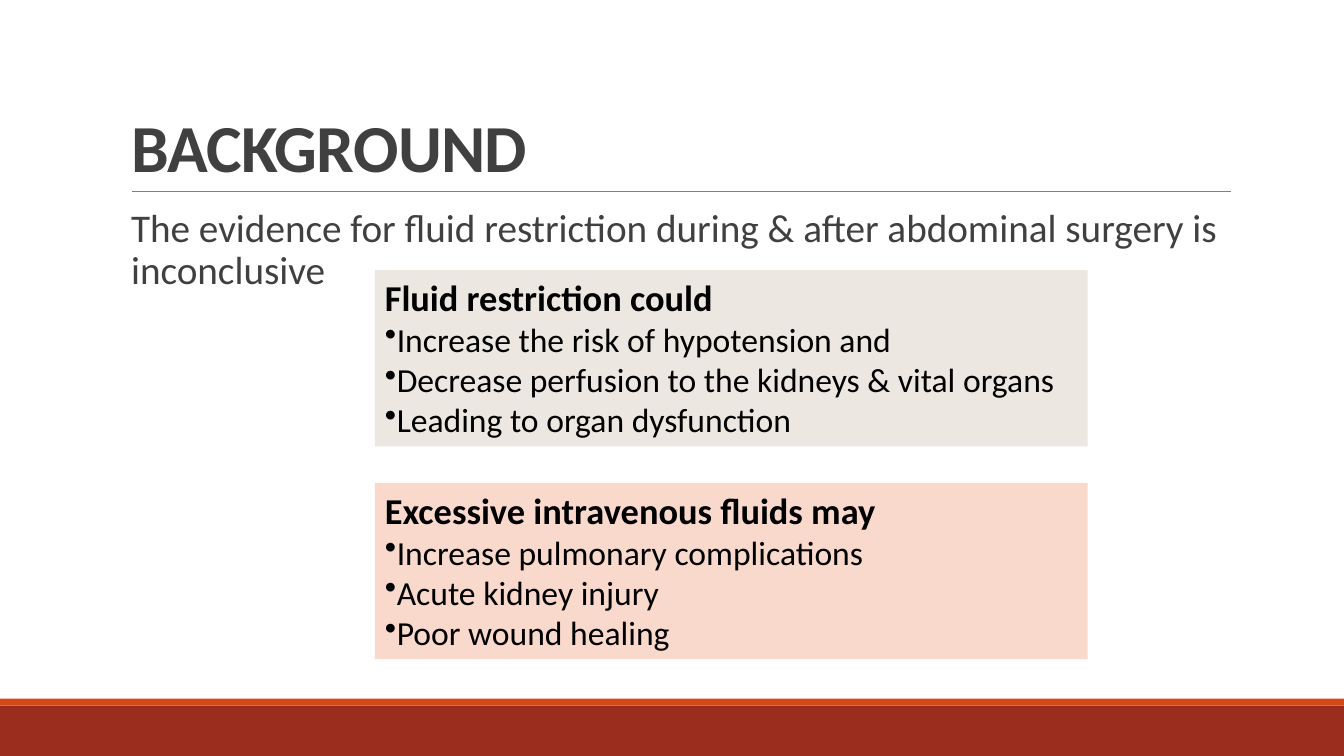
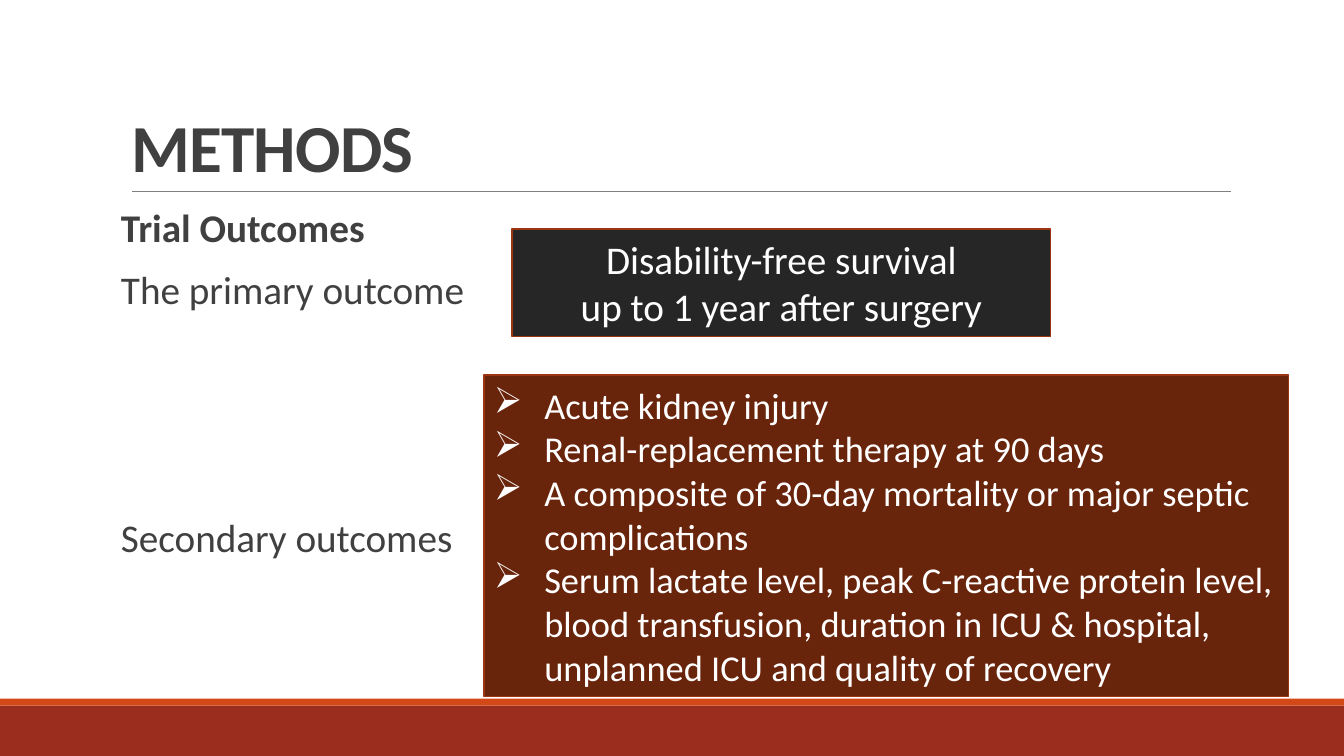
import pptx
import pptx.dml.color
import pptx.enum.shapes
import pptx.enum.text
import pptx.oxml.ns
import pptx.util
import lxml.etree

ALIGN = pptx.enum.text.PP_ALIGN
ANCHOR = pptx.enum.text.MSO_ANCHOR
BODY_SPACING = {"line_spacing": 0.9, "space_after": pptx.util.Pt(2)}


def color(value):
    return pptx.dml.color.RGBColor.from_string(value)


def apply(target, values):
    for name, value in values.items():
        setattr(target, name, value)


def add_xml(parent, tag, **attributes):
    return lxml.etree.SubElement(parent, pptx.oxml.ns.qn(tag), **attributes)


class Deck:
    font = "Calibri"
    ink = "404040"
    bands = (("9B2D1F", (0, 93.33, 100, 6.67)), ("D34817", (0, 92.4, 100, 0.93)))
    rule = (9.83, 25.33, 91.6, 25.33)
    title_area = (9, 4.13, 82.5, 21.2)
    body_area = (9, 26.93, 82.5, 58.67)

    def __init__(self):
        self.presentation = pptx.Presentation()
        self.presentation.slide_width = pptx.util.Inches(13.33)
        self.presentation.slide_height = pptx.util.Inches(7.5)
        self.slide = None

    def measure(self, area):
        sides = (self.presentation.slide_width, self.presentation.slide_height) * 2
        return [int(side * share / 100) for side, share in zip(sides, area)]

    def start_slide(self, title):
        self.slide = self.presentation.slides.add_slide(self.presentation.slide_layouts[1])
        for fill, area in self.bands:
            self.rectangle(area, fill)
        self.line(self.rule)
        shape = self.place(self.slide.shapes.title, self.title_area, ANCHOR.BOTTOM)
        paragraph = self.add_text(shape, 0, title, 48, self.ink, bold=True, layout={"line_spacing": 0.85})
        paragraph.runs[0].font._element.set("spc", "-50")

    def place(self, shape, area, anchor):
        apply(shape, dict(zip(("left", "top", "width", "height"), self.measure(area))))
        apply(shape.text_frame, {
            "word_wrap": True,
            "auto_size": pptx.enum.text.MSO_AUTO_SIZE.NONE,
            "vertical_anchor": anchor,
        })
        return shape

    def line(self, ends):
        connector = self.slide.shapes.add_connector(
            pptx.enum.shapes.MSO_CONNECTOR.STRAIGHT, *self.measure(ends))
        connector.line.color.rgb = color("808080")
        connector.line.width = pptx.util.Pt(0.5)
        add_xml(connector._element.spPr, "a:effectLst")

    def rectangle(self, area, fill, outline=None, anchor=ANCHOR.TOP):
        shape = self.slide.shapes.add_shape(
            pptx.enum.shapes.MSO_SHAPE.RECTANGLE, *self.measure(area))
        shape.shadow.inherit = False
        shape.fill.solid()
        shape.fill.fore_color.rgb = color(fill)
        if outline:
            shape.line.color.rgb = color(outline)
            shape.line.width = pptx.util.Pt(1.25)
        else:
            shape.line.fill.background()
        return self.place(shape, area, anchor)

    def add_text(self, shape, index, text, size, ink, bold=False, bullet=None,
                 margin=0, hanging=0, layout=None):
        frame = shape.text_frame
        paragraph = frame.paragraphs[0] if index == 0 else frame.add_paragraph()
        apply(paragraph, {"alignment": ALIGN.LEFT, **(layout or {})})
        run = paragraph.add_run()
        run.text = text
        apply(run.font, {"name": self.font, "size": pptx.util.Pt(size), "bold": bold})
        run.font.color.rgb = color(ink)
        properties = paragraph._p.get_or_add_pPr()
        properties.set("marL", str(int(pptx.util.Inches(margin))))
        properties.set("indent", str(-int(pptx.util.Inches(hanging))))
        if bullet:
            add_xml(properties, "a:buChar", char=bullet)
        else:
            add_xml(properties, "a:buNone")
        return paragraph

    def body(self, entries, margin=0):
        shape = self.place(self.slide.placeholders[1], self.body_area, ANCHOR.TOP)
        apply(shape.text_frame, {"margin_left": 0, "margin_right": 0})
        for index, (text, bold, space_before) in enumerate(entries):
            layout = {**BODY_SPACING, "space_before": pptx.util.Pt(space_before)}
            self.add_text(shape, index, text, 28, self.ink, bold, margin=margin, layout=layout)

    def headed_list(self, top, fill, heading, items):
        shape = self.rectangle((27.9, top, 53.04, 23.33), fill)
        self.add_text(shape, 0, heading, 26, "000000", bold=True)
        for index, item in enumerate(items, 1):
            self.add_text(shape, index, item, 24, "000000", bullet="•")

    def panel(self, area, fill, lines, size, **style):
        shape = self.rectangle(area, fill, "9C3511", ANCHOR.MIDDLE)
        for index, text in enumerate(lines):
            self.add_text(shape, index, text, size, "FFFFFF", **style)


def main():
    deck = Deck()

    deck.start_slide("BACKGROUND")
    deck.body([(
        "The evidence for fluid restriction during & after abdominal surgery is inconclusive",
        False, 12)], margin=0.1)
    deck.headed_list(35.73, "ECE8E1", "Fluid restriction could", [
        "Increase the risk of hypotension and",
        "Decrease perfusion to the kidneys & vital organs",
        "Leading to organ dysfunction",
    ])
    deck.headed_list(63.87, "FAD9CD", "Excessive intravenous fluids may", [
        "Increase pulmonary complications",
        "Acute kidney injury",
        "Poor wound healing",
    ])

    deck.start_slide("METHODS")
    deck.body([
        ("Trial Outcomes", True, 12),
        ("The primary outcome", False, 12),
        ("Secondary outcomes", False, 145),
    ])
    deck.panel((38.11, 30.27, 40.06, 14.27), "262626", [
        "Disability-free survival",
        "up to 1 year after surgery",
    ], 28, layout={"alignment": ALIGN.CENTER})
    deck.panel((36.01, 49.6, 59.86, 42.53), "69240C", [
        "Acute kidney injury",
        "Renal-replacement therapy at 90 days",
        "A composite of 30-day mortality or major septic complications",
        "Serum lactate level, peak C-reactive protein level, blood transfusion, "
        "duration in ICU & hospital, unplanned ICU and quality of recovery",
    ], 26, bullet="➢", margin=0.5, hanging=0.5)

    deck.presentation.save("out.pptx")


if __name__ == "__main__":
    main()
